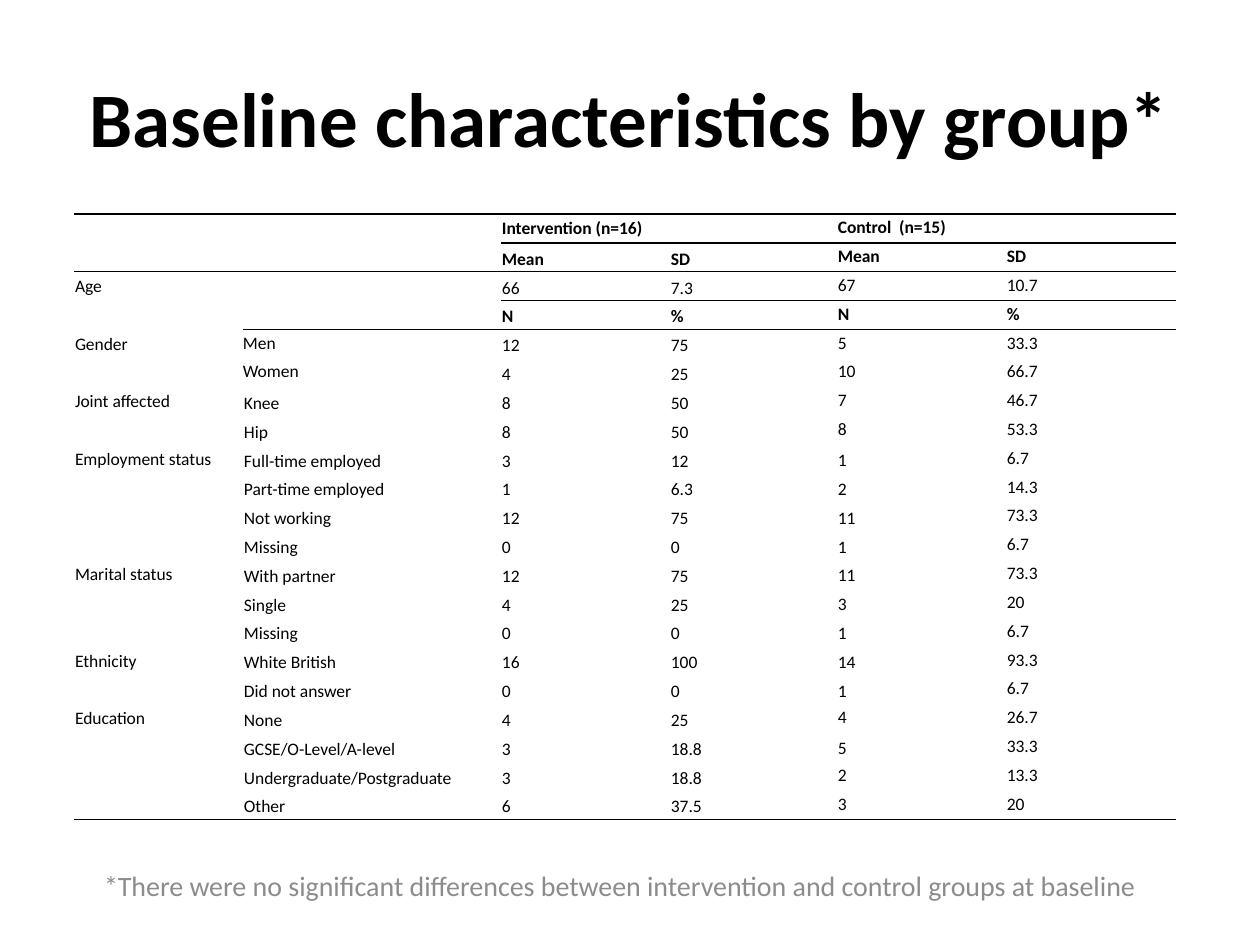
from typing import NamedTuple

from lxml.etree import SubElement
from pptx import Presentation
from pptx.dml.color import RGBColor
from pptx.enum.text import MSO_ANCHOR, PP_ALIGN
from pptx.oxml.ns import qn
from pptx.util import Emu, Pt

SCALE = 914400 / 126
FONT = "Calibri"
COLORS = {"ink": "000000", "note": "8C8C8C"}


class Box(NamedTuple):
    left: int
    top: int
    width: int
    height: int


class Row(NamedTuple):
    group: str
    level: str
    mean: str
    spread: str
    mean2: str
    spread2: str


class Span(NamedTuple):
    row: int
    col: int
    last_row: int
    last_col: int


ROWS = [
    Row("", "", "Intervention (n=16)", "", "Control  (n=15)", ""),
    Row("", "", "Mean", "SD", "Mean", "SD"),
    Row("Age", "", "66", "7.3", "67", "10.7"),
    Row("", "", "N", "%", "N", "%"),
    Row("Gender", "Men", "12", "75", "5", "33.3"),
    Row("", "Women", "4", "25", "10", "66.7"),
    Row("Joint affected", "Knee", "8", "50", "7", "46.7"),
    Row("", "Hip", "8", "50", "8", "53.3"),
    Row("Employment status", "Full-time employed", "3", "12", "1", "6.7"),
    Row("", "Part-time employed", "1", "6.3", "2", "14.3"),
    Row("", "Not working", "12", "75", "11", "73.3"),
    Row("", "Missing", "0", "0", "1", "6.7"),
    Row("Marital status", "With partner", "12", "75", "11", "73.3"),
    Row("", "Single", "4", "25", "3", "20"),
    Row("", "Missing", "0", "0", "1", "6.7"),
    Row("Ethnicity", "White British", "16", "100", "14", "93.3"),
    Row("", "Did not answer", "0", "0", "1", "6.7"),
    Row("Education", "None", "4", "25", "4", "26.7"),
    Row("", "GCSE/O-Level/A-level", "3", "18.8", "5", "33.3"),
    Row("", "Undergraduate/Postgraduate", "3", "18.8", "2", "13.3"),
    Row("", "Other", "6", "37.5", "3", "20"),
]
SPANS = [
    Span(0, 0, 0, 1), Span(0, 2, 0, 3), Span(0, 4, 0, 5),
    Span(1, 0, 1, 1), Span(2, 0, 2, 1),
    Span(8, 0, 11, 0), Span(12, 0, 14, 0), Span(15, 0, 16, 0), Span(17, 0, 20, 0),
]
WIDTHS = [169, 258, 169, 168, 169, 169]
RULES = {0: 0, 1: 2, 2: 0, 3: 2, 4: 1, 21: 0}
HEADS = {0, 1, 3}
MIDDLE = {*range(8, 17), 18}


def px(size: float) -> Emu:
    return Emu(round(size * SCALE))


def place(shape, box: Box) -> None:
    shape.left, shape.top, shape.width, shape.height = map(px, box)


def style(para, size: int, color: str, bold: bool = False) -> None:
    for run in para.runs:
        font = run.font
        font.name, font.size, font.bold = FONT, Pt(size), bold
        font.color.rgb = RGBColor.from_string(COLORS[color])


def center(shape, text: str, size: int, color: str, bold: bool = False) -> None:
    frame = shape.text_frame
    frame.word_wrap = True
    frame.vertical_anchor = MSO_ANCHOR.MIDDLE
    frame.text = text
    para = frame.paragraphs[0]
    para.alignment = PP_ALIGN.CENTER
    style(para, size, color, bold)


def border(cell, side: str, shown: bool) -> None:
    props = cell._tc.get_or_add_tcPr()
    line = SubElement(props, qn(f"a:ln{side}"), w=str(Pt(1)))
    if shown:
        fill = SubElement(line, qn("a:solidFill"))
        SubElement(fill, qn("a:srgbClr"), val=COLORS["ink"])
    else:
        SubElement(line, qn("a:noFill"))


def fill_cell(cell, row: int, col: int, text: str) -> None:
    plain = col > 3 or (col == 1 and row in (4, 5))
    inset = px(0 if plain else 1)
    cell.margin_left = cell.margin_right = cell.margin_top = inset
    cell.margin_bottom = 0
    middle = row in MIDDLE if col == 4 else col in (1, 2, 3) and row > 0 and not plain
    cell.vertical_anchor = MSO_ANCHOR.MIDDLE if middle else MSO_ANCHOR.TOP

    para = cell.text_frame.paragraphs[0]
    para.text = text
    para.line_spacing = 1.15
    style(para, 10, "ink", row in HEADS)
    if not text:
        SubElement(para._p, qn("a:endParaRPr"), sz="1000")

    end = row + cell.span_height
    border(cell, "L", False)
    border(cell, "R", False)
    border(cell, "T", col >= RULES.get(row, 6))
    border(cell, "B", col >= RULES.get(end, 6))
    cell.fill.background()


def add_grid(slide, box: Box) -> None:
    table = slide.shapes.add_table(len(ROWS), len(WIDTHS), *map(px, box)).table
    table.first_row = table.horz_banding = False
    for column, width in zip(table.columns, WIDTHS):
        column.width = px(width)
    for span in SPANS:
        first = table.cell(span.row, span.col)
        first.merge(table.cell(span.last_row, span.last_col))
    for r, row in enumerate(ROWS):
        for c, text in enumerate(row):
            fill_cell(table.cell(r, c), r, c, text)


def main() -> None:
    deck = Presentation()
    deck.slide_width, deck.slide_height = px(1260), px(945)
    slide = deck.slides.add_slide(deck.slide_layouts[5])

    title = slide.shapes.title
    place(title, Box(63, 38, 1134, 157))
    center(title, "Baseline characteristics by group*", 44, "ink", True)

    add_grid(slide, Box(74, 214, 1102, 606))

    note = slide.shapes.add_textbox(*map(px, Box(64, 860, 1112, 50)))
    center(
        note,
        "*There were no significant differences between intervention "
        "and control groups at baseline",
        16,
        "note",
    )
    deck.save("out.pptx")


if __name__ == "__main__":
    main()
